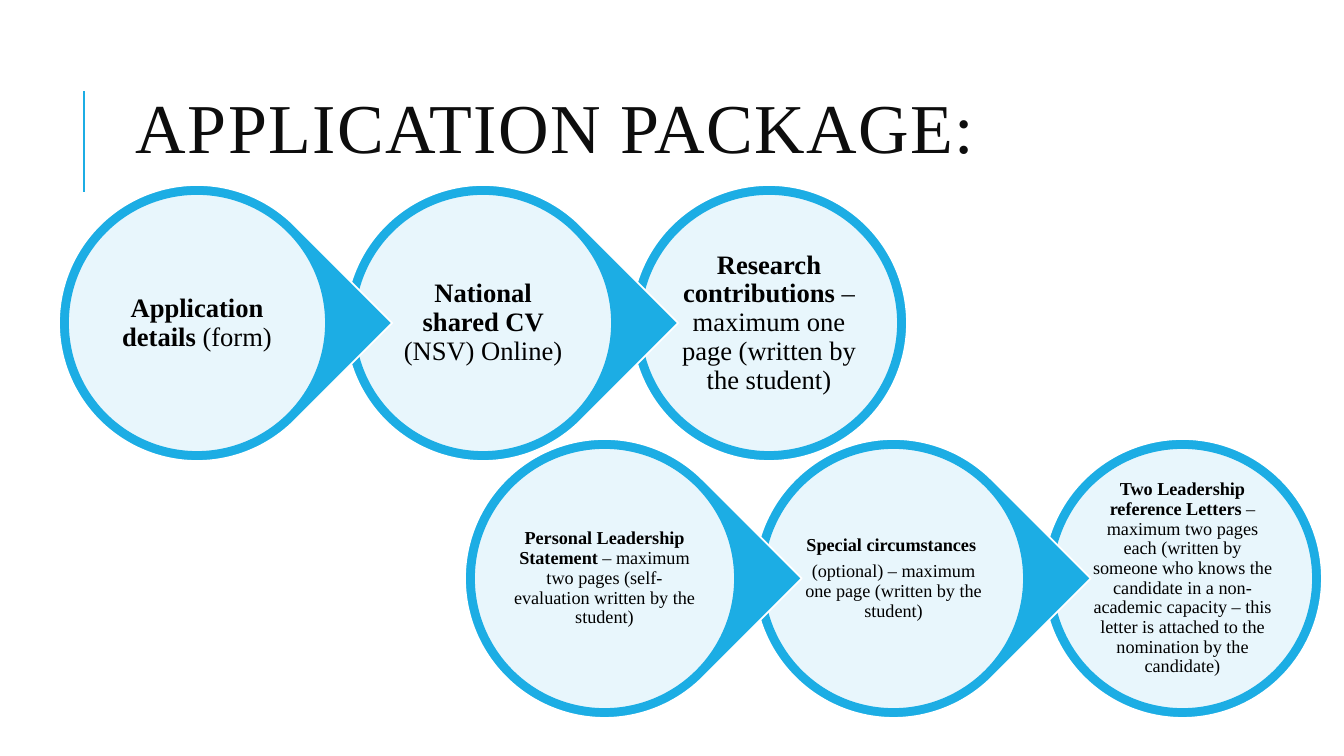
import pptx
import pptx.dml.color
import pptx.enum.shapes
import pptx.enum.text
import pptx.oxml
import pptx.oxml.ns
import pptx.util
import lxml.etree

SHAPE = pptx.enum.shapes.MSO_SHAPE
FONT = "Times New Roman"
COLORS = {"blue": "1CADE4", "white": "FFFFFF", "black": "000000", "title": "0D0D0D"}


def px(n):
    return round(n * 12192000 / 1344)


def rgb(name):
    return pptx.dml.color.RGBColor.from_string(COLORS[name])


prs = pptx.Presentation()
prs.slide_width, prs.slide_height = px(1344), px(756)
s = prs.slides.add_slide(prs.slide_layouts[6])

rule = s.shapes.add_connector(
    pptx.enum.shapes.MSO_CONNECTOR.STRAIGHT, px(84), px(192), px(84), px(91))
rule.line.color.rgb = rgb("blue")
rule.line.width = pptx.util.Pt(1.5)
lxml.etree.SubElement(rule._element.spPr, pptx.oxml.ns.qn("a:effectLst"))

title = s.shapes.add_textbox(px(126), px(61), px(948), px(145))
tf = title.text_frame
tf.word_wrap = True
tf.vertical_anchor = pptx.enum.text.MSO_ANCHOR.MIDDLE
p = tf.paragraphs[0]
p.line_spacing = 0.8
p.font.name, p.font.size = FONT, pptx.util.Pt(50)
p.font.color.rgb = rgb("title")
r = p.add_run()
r.text = "APPLICATION PACKAGE:"
r.font._element.set("spc", "100")

rows = [
    {"left": 59, "top": 185, "pitch": 286, "size": 276, "text": 184, "pt": 19, "inset": 3,
     "steps": [
         [[("Application details ", True), ("(form)", False)]],
         [[("National shared CV ", True), ("(NSV) Online)", False)]],
         [[("Research contributions", True),
           (" – maximum one page (written by the student)", False)]],
     ]},
    {"left": 465, "top": 439, "pitch": 289, "size": 279, "text": 187, "pt": 13, "inset": 2,
     "steps": [
         [[("Personal Leadership Statement", True),
           (" – maximum two pages (self-evaluation written by the student)", False)]],
         [[("Special circumstances ", True)],
          [("(optional) – maximum one page (written by the student)", False)]],
         [[("Two Leadership reference Letters", True),
           (" – maximum two pages each (written by someone who knows the candidate in a "
            "non-academic capacity – this letter is attached to the nomination by the "
            "candidate)", False)]],
     ]},
]

for row in rows:
    group = s.shapes.add_group_shape()
    last = len(row["steps"]) - 1
    for i in range(last, -1, -1):
        left = row["left"] + i * row["pitch"]
        outer = SHAPE.OVAL if i == last else SHAPE.TEAR
        for kind, gap, fill, line in [(outer, 0, "blue", "white"),
                                      (SHAPE.OVAL, 9, "white", "blue")]:
            size = row["size"] - 2 * gap
            sp = group.shapes.add_shape(
                kind, px(left + gap), px(row["top"] + gap), px(size), px(size))
            sp.shadow.inherit = False
            sp.fill.solid()
            sp.fill.fore_color.rgb = rgb(fill)
            sp.line.color.rgb = rgb(line)
            sp.line.width = pptx.util.Pt(1.25)
            if kind == SHAPE.TEAR:
                sp.rotation = 45
        color = sp._element.spPr.find(pptx.oxml.ns.qn("a:solidFill"))[0]
        lxml.etree.SubElement(color, pptx.oxml.ns.qn("a:alpha"), val="90000")

        box = group.shapes.add_textbox(
            px(left + 46), px(row["top"] + 46), px(row["text"]), px(row["text"]))
        tf = box.text_frame
        tf.word_wrap = True
        tf.vertical_anchor = pptx.enum.text.MSO_ANCHOR.MIDDLE
        tf.margin_left = tf.margin_right = px(row["inset"])
        tf.margin_top = tf.margin_bottom = px(row["inset"])
        for n, runs in enumerate(row["steps"][i]):
            p = tf.add_paragraph() if n else tf.paragraphs[0]
            p.alignment = pptx.enum.text.PP_ALIGN.CENTER
            p.line_spacing = 0.9
            p.space_after = pptx.util.Pt(row["pt"] * 0.35)
            p.font.name, p.font.size = FONT, pptx.util.Pt(row["pt"])
            p.font.color.rgb = rgb("black")
            for text, bold in runs:
                r = p.add_run()
                r.text = text
                r.font.bold = bold

prs.save("out.pptx")
